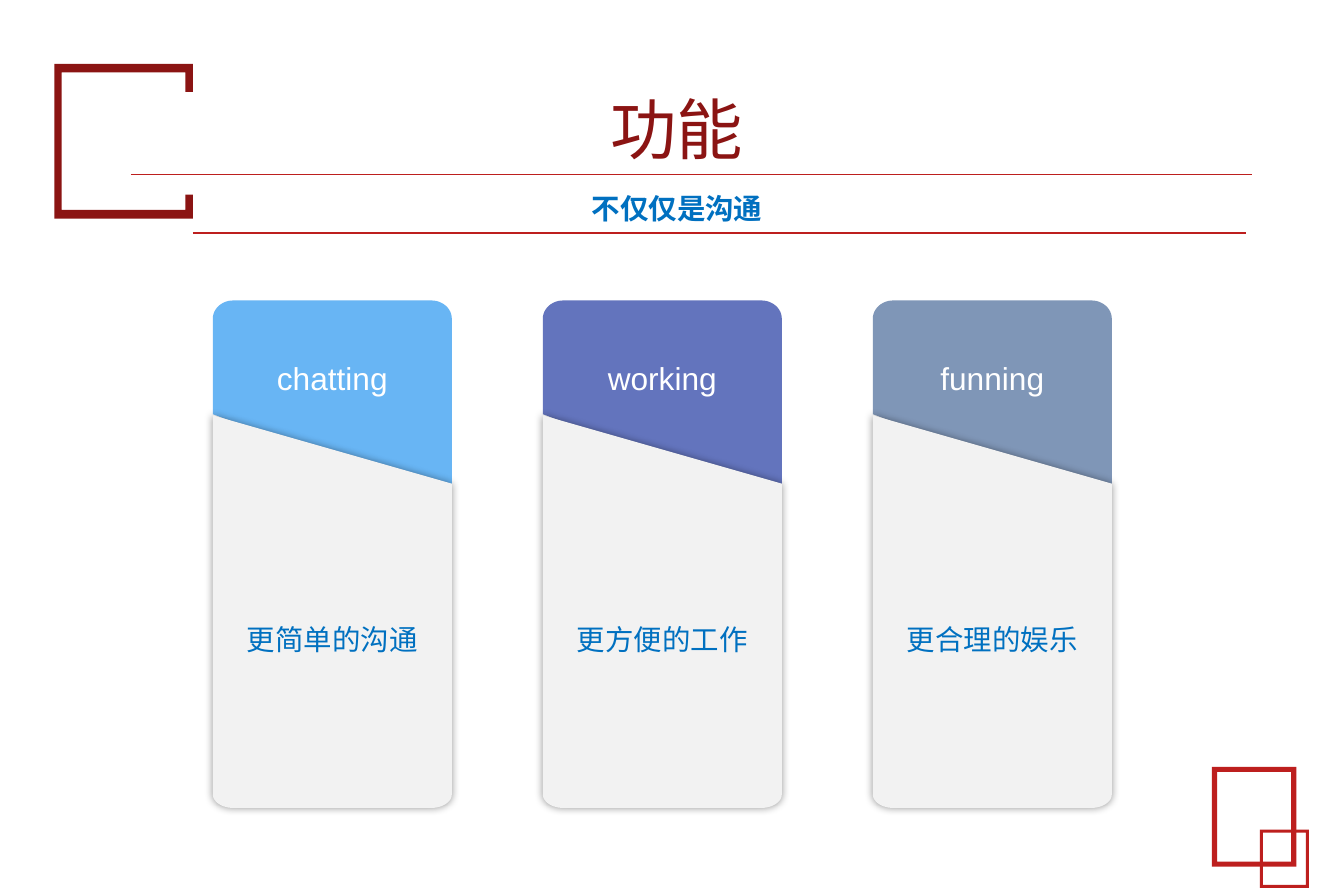
from math import cos, pi, sin

from lxml.etree import SubElement
from pptx import Presentation
from pptx.dml.color import RGBColor
from pptx.enum.shapes import MSO_CONNECTOR, MSO_SHAPE
from pptx.enum.text import MSO_ANCHOR, PP_ALIGN
from pptx.oxml.ns import qn
from pptx.util import Pt

DARK_RED = RGBColor(0x8B, 0x14, 0x13)
RED = RGBColor(0xBD, 0x1F, 0x1E)
BLUE = RGBColor(0x00, 0x70, 0xC0)
WHITE = RGBColor(0xFF, 0xFF, 0xFF)
PALE_GREY = RGBColor(0xF2, 0xF2, 0xF2)
SKY = RGBColor(0x68, 0xB5, 0xF4)
INDIGO = RGBColor(0x63, 0x74, 0xBD)
SLATE = RGBColor(0x7F, 0x96, 0xB7)

LATIN_FONT = "Arial"
CHINESE_FONT = "Noto Sans CJK SC"

CARDS = [
    ("chatting", "更简单的沟通", SKY),
    ("working", "更方便的工作", INDIGO),
    ("funning", "更合理的娱乐", SLATE),
]
CARD_LEFT, CARD_WIDTH, CARD_PITCH = 134.7, 151.2, 208.8
CARD_TOP, CARD_BOTTOM = 190.1, 511.2
CORNER_WIDTH = 13


def paint(shape, color):
    shape.fill.solid()
    shape.fill.fore_color.rgb = color
    shape.line.fill.background()
    shape.shadow.inherit = False


def write_text(shape, text, size, color, insets=(7.2, 3.6, 7.2, 3.6),
               font=LATIN_FONT, bold=False, spacing=1.0, anchor=MSO_ANCHOR.MIDDLE):
    frame = shape.text_frame
    frame.word_wrap = True
    frame.vertical_anchor = anchor
    frame.margin_left, frame.margin_top, frame.margin_right, frame.margin_bottom = map(Pt, insets)
    para = frame.paragraphs[0]
    para.alignment = PP_ALIGN.CENTER
    para.line_spacing = spacing
    span = para.add_run()
    span.text = text
    span.font.name = font
    span.font.size = Pt(size)
    span.font.bold = bold
    span.font.color.rgb = color
    SubElement(span.font._element, qn("a:ea"), typeface=CHINESE_FONT)


def add_text(page, left, top, width, height, text, size, color, **options):
    box = page.shapes.add_textbox(Pt(left), Pt(top), Pt(width), Pt(height))
    write_text(box, text, size, color, **options)


def add_outline(shapes, points, color):
    corners = [(Pt(x), Pt(y)) for x, y in points]
    builder = shapes.build_freeform(*corners[0])
    builder.add_line_segments(corners[1:], close=True)
    shape = builder.convert_to_shape()
    paint(shape, color)
    return shape


def add_rule(page, left, right, y, weight):
    rule = page.shapes.add_connector(MSO_CONNECTOR.STRAIGHT, Pt(left), Pt(y), Pt(right), Pt(y))
    rule.line.color.rgb = RED
    rule.line.width = Pt(weight)
    SubElement(rule._element.spPr, qn("a:effectLst"))


def add_frame(page, left, top, width, height):
    frame = page.shapes.add_shape(MSO_SHAPE.FRAME, Pt(left), Pt(top), Pt(width), Pt(height))
    frame.adjustments[0] = 0.061
    paint(frame, RED)


def add_soft_shadow(shape):
    effects = shape._element.spPr.find(qn("a:effectLst"))
    shadow = SubElement(effects, qn("a:outerShdw"), blurRad=str(Pt(5)), dist="0",
                        algn="ctr", rotWithShape="0")
    color = SubElement(shadow, qn("a:srgbClr"), val="000000")
    SubElement(color, qn("a:alpha"), val="40000")


def corner(center_x, center_y, height, start):
    """Points of a quarter ellipse, clockwise from the start angle."""
    angles = [start + step * pi / 24 for step in range(13)]
    return [(center_x + CORNER_WIDTH * cos(angle), center_y + height * sin(angle))
            for angle in angles]


def add_card(page, left, heading, caption, color):
    right = left + CARD_WIDTH
    inner_left, inner_right = left + CORNER_WIDTH, right - CORNER_WIDTH
    group = page.shapes.add_group_shape()

    # Coloured head with rounded top corners
    head_center = CARD_TOP + 11.5
    head = add_outline(group.shapes, [
        *corner(inner_left, head_center, 11.5, pi),
        *corner(inner_right, head_center, 11.5, 1.5 * pi),
        (right, 318.2), (left, 262.1)], color)
    write_text(head, heading, 20, WHITE, insets=(7.2, 3.6, 7.2, 33.8))

    # Grey body with a slanted top edge
    body_center = CARD_BOTTOM - 8.6
    body = add_outline(group.shapes, [
        (left, 262.8), (right, 306),
        *corner(inner_right, body_center, 8.6, 0),
        *corner(inner_left, body_center, 8.6, 0.5 * pi)], PALE_GREY)
    add_soft_shadow(body)
    write_text(body, caption, 18, BLUE, insets=(5.8, 33.8, 5.8, 3.6), spacing=1.2)


def main():
    deck = Presentation()
    deck.slide_width, deck.slide_height = Pt(850.4), Pt(566.9)
    page = deck.slides.add_slide(deck.slide_layouts[6])

    # Corner decorations
    add_frame(page, 766.8, 485.2, 53.5, 63.2)
    add_frame(page, 797.2, 525, 31, 36.8)
    add_outline(page.shapes, [
        (34.4, 40.5), (122, 40.5), (122, 58.2), (117.4, 58.2), (117.4, 45.9), (39, 45.9),
        (39, 132.9), (117.4, 132.9), (117.4, 123.2), (122, 123.2), (122, 138.3),
        (34.4, 138.3)], DARK_RED)

    # Title, subtitle and their rules
    add_rule(page, 122, 788.4, 147.5, 1.5)
    add_text(page, 64.1, 36, 727.9, 74.2, "功能", 42, DARK_RED,
             spacing=0.9, anchor=MSO_ANCHOR.BOTTOM)
    add_rule(page, 82.8, 792, 110.4, 0.5)
    add_text(page, 233.3, 117.4, 390.2, 28.8, "不仅仅是沟通", 18, BLUE,
             font=CHINESE_FONT, bold=True, anchor=MSO_ANCHOR.TOP)

    # Feature cards
    for index, card in enumerate(CARDS):
        add_card(page, CARD_LEFT + index * CARD_PITCH, *card)

    deck.save("out.pptx")


if __name__ == "__main__":
    main()
